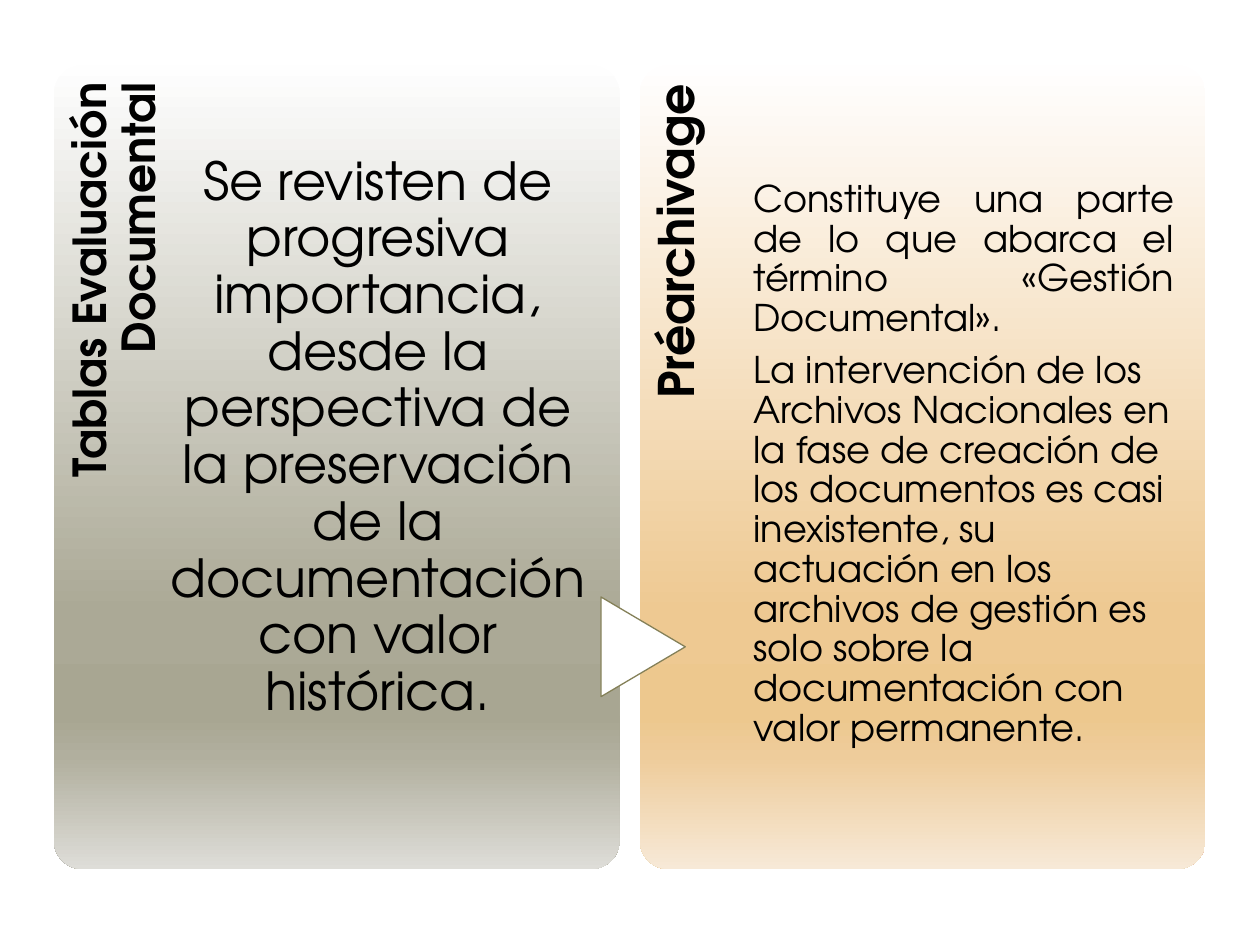
from dataclasses import dataclass

from lxml import etree
from pptx import Presentation
from pptx.dml.color import RGBColor
from pptx.enum.shapes import MSO_SHAPE
from pptx.enum.text import MSO_ANCHOR, MSO_AUTO_SIZE, PP_ALIGN
from pptx.oxml.ns import qn
from pptx.util import Cm, Pt

ROUNDED = MSO_SHAPE.ROUNDED_RECTANGLE
TRIANGLE = MSO_SHAPE.FLOWCHART_EXTRACT
TOP = MSO_ANCHOR.TOP
NO_AUTOFIT = MSO_AUTO_SIZE.NONE
LEFT, CENTER, RIGHT, JUSTIFY = (
    PP_ALIGN.LEFT, PP_ALIGN.CENTER, PP_ALIGN.RIGHT, PP_ALIGN.JUSTIFY)

FONT = "TeX Gyre Adventor"
COMPARISON_LAYOUT = 4
PANEL_LEFT, PANEL_TOP = 1.09, 1.32
PANEL_WIDTH, PANEL_HEIGHT = 11.4, 16.2
PANEL_PITCH = 11.81
HEADING_OFFSET, HEADING_TOP = -5.49, 6.83
HEADING_WIDTH, HEADING_HEIGHT = 13.28, 2.29
BODY_OFFSET, BODY_WIDTH = 2.29, 8.48
STOP_POSITIONS = (0, 68, 81, 86, 100)


@dataclass(frozen=True)
class TextLine:
    text: str
    alignment: PP_ALIGN


@dataclass(frozen=True)
class Panel:
    heading: str
    heading_size: int
    heading_inset: float
    body: tuple[TextLine, ...]
    body_size: int
    body_inset: float
    gradient: tuple[str, ...]


PANELS = (
    Panel(
        "Tablas Evaluación Documental", 26, 0.33,
        (TextLine("Se revisten de progresiva importancia, desde la perspectiva "
                  "de la preservación de la documentación con valor histórica.",
                  CENTER),),
        30, 1.8,
        ("FEFEFE", "ABA996", "A8A692", "B1AF9E", "DEDDD8")),
    Panel(
        "Préarchivage", 28, 0.36,
        (TextLine("Constituye una parte de lo que abarca el término "
                  "«Gestión Documental».", JUSTIFY),
         TextLine("La intervención de los Archivos Nacionales en la fase de "
                  "creación de los documentos es casi inexistente, su actuación "
                  "en los archivos de gestión es solo sobre la documentación "
                  "con valor permanente.", LEFT)),
        21, 2.32,
        ("FFFEFE", "EEC992", "EDC88E", "EECC9B", "F7E9D7")),
)


def color(value: str) -> RGBColor:
    return RGBColor.from_string(value)


def place(shape, left: float, top: float, width: float, height: float) -> None:
    shape.left, shape.top = Cm(left), Cm(top)
    shape.width, shape.height = Cm(width), Cm(height)


def set_gradient(shape, colors: tuple[str, ...]) -> None:
    shape.fill.gradient()
    shape.fill.gradient_angle = 270
    stops = shape._element.spPr.find(qn("a:gradFill")).find(qn("a:gsLst"))
    for stop in list(stops):
        stops.remove(stop)
    for position, value in zip(STOP_POSITIONS, colors):
        stop = etree.SubElement(stops, qn("a:gs"), pos=str(position * 1000))
        etree.SubElement(stop, qn("a:srgbClr"), val=str(color(value)))


def set_text(placeholder, lines: tuple[TextLine, ...], size: int, bold: bool,
             top_inset: float, right_inset: float) -> None:
    frame = placeholder.text_frame
    frame.word_wrap = True
    frame.auto_size = NO_AUTOFIT
    frame.vertical_anchor = TOP
    frame.margin_left = frame.margin_bottom = 0
    frame.margin_top, frame.margin_right = Cm(top_inset), Cm(right_inset)
    for index, line in enumerate(lines):
        paragraph = frame.paragraphs[0] if index == 0 else frame.add_paragraph()
        properties = paragraph._p.get_or_add_pPr()
        properties.set("marL", "0")
        properties.set("indent", "0")
        etree.SubElement(properties, qn("a:buNone"))
        paragraph.alignment = line.alignment
        paragraph.line_spacing = 0.9
        paragraph.space_before = Pt(0)
        paragraph.space_after = Pt(size * 0.35)
        run = paragraph.add_run()
        run.text = line.text
        run.font.name = FONT
        run.font.size = Pt(size)
        run.font.bold = bold
        run.font.color.rgb = color("000000")


def draw_panel(slide, panel: Panel, index: int) -> None:
    left = PANEL_LEFT + index * PANEL_PITCH
    background = slide.shapes.add_shape(
        ROUNDED, Cm(left), Cm(PANEL_TOP), Cm(PANEL_WIDTH), Cm(PANEL_HEIGHT))
    background.adjustments[0] = 0.05
    background.shadow.inherit = False
    background.line.fill.background()
    set_gradient(background, panel.gradient)
    slide.shapes._spTree.insert(2 + index, background._element)

    heading = slide.placeholders[1 + 2 * index]
    place(heading, left + HEADING_OFFSET, HEADING_TOP,
          HEADING_WIDTH, HEADING_HEIGHT)
    heading.rotation = 270
    set_text(heading, (TextLine(panel.heading, RIGHT),), panel.heading_size,
             True, 0.25, panel.heading_inset)

    body = slide.placeholders[2 + 2 * index]
    place(body, left + BODY_OFFSET, PANEL_TOP, BODY_WIDTH, PANEL_HEIGHT)
    set_text(body, panel.body, panel.body_size, False, panel.body_inset, 0)


def draw_arrow(slide) -> None:
    arrow = slide.shapes.add_shape(
        TRIANGLE, Cm(11.96), Cm(12.19), Cm(2.01), Cm(1.7))
    arrow.rotation = 90
    arrow.shadow.inherit = False
    arrow.fill.solid()
    arrow.fill.fore_color.rgb = color("FFFFFF")
    arrow.line.color.rgb = color("848058")
    arrow.line.width = Pt(0.75)


def main() -> None:
    presentation = Presentation()
    presentation.slide_width, presentation.slide_height = Cm(25.4), Cm(19.05)
    slide = presentation.slides.add_slide(
        presentation.slide_layouts[COMPARISON_LAYOUT])
    title = slide.shapes.title._element
    title.getparent().remove(title)
    for index, panel in enumerate(PANELS):
        draw_panel(slide, panel, index)
    draw_arrow(slide)
    presentation.save("out.pptx")


if __name__ == "__main__":
    main()
